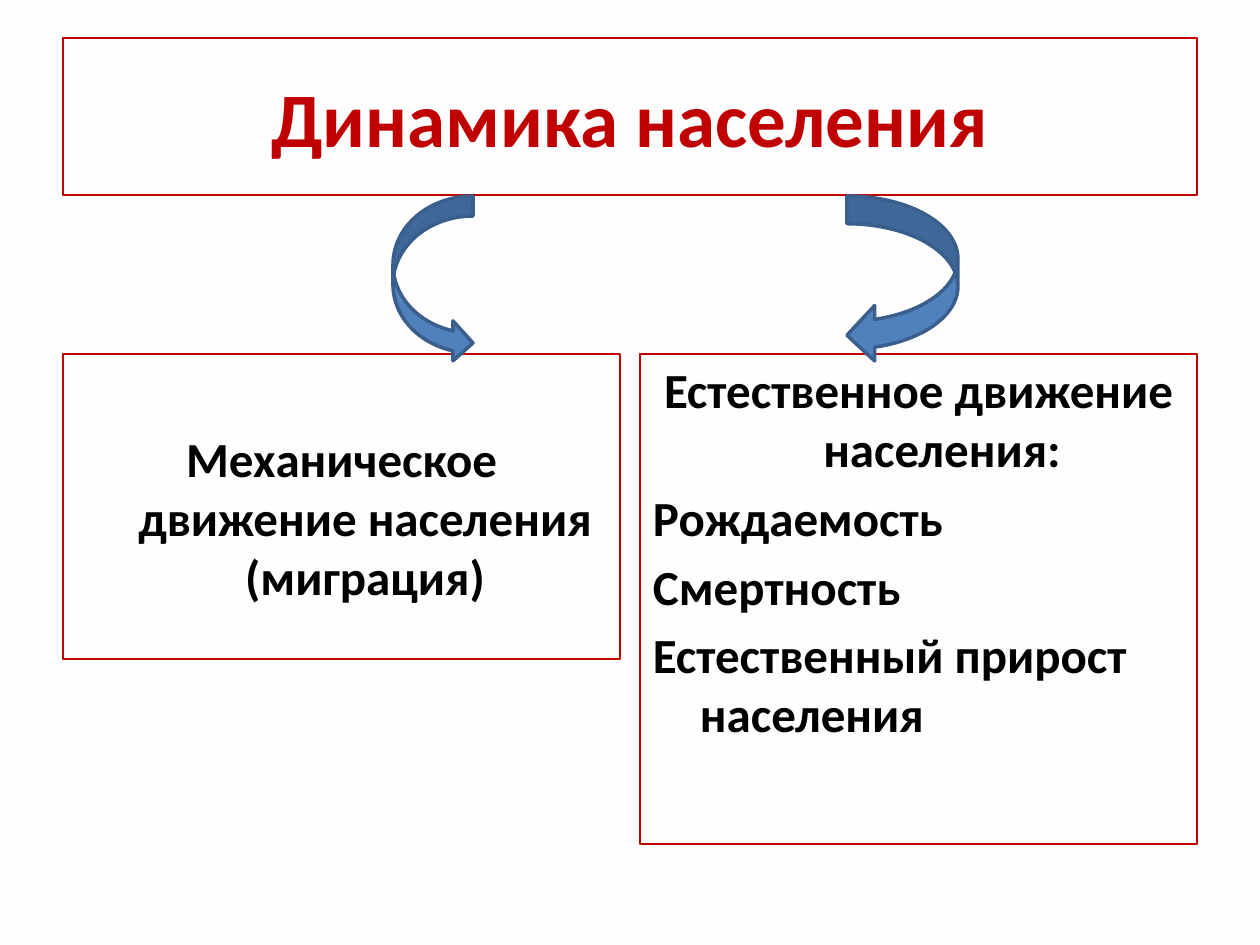
import pptx
import pptx.util
import pptx.dml.color
import pptx.enum.shapes
import pptx.enum.text

SCALE = 914400 / 126
COLORS = {
    "background": "FFFEFF",
    "red": "C00000",
    "black": "000000",
    "arrow": "4F81BD",
    "arrow_edge": "3A5F8C",
}
SHAPES = pptx.enum.shapes.MSO_SHAPE
ALIGN = pptx.enum.text.PP_ALIGN
ANCHOR = pptx.enum.text.MSO_ANCHOR


def emu(px):
    return pptx.util.Emu(round(px * SCALE))


def color(name):
    return pptx.dml.color.RGBColor.from_string(COLORS[name])


def add_shape(page, kind, box, fill, line, weight):
    shape = page.shapes.add_shape(kind, *map(emu, box))
    shape.shadow.inherit = False
    if fill:
        shape.fill.solid()
        shape.fill.fore_color.rgb = color(fill)
    else:
        shape.fill.background()
    shape.line.color.rgb = color(line)
    shape.line.width = pptx.util.Pt(weight)
    return shape


def add_frame(page, box, anchor=ANCHOR.TOP, top=6):
    """Add a red-edged box and return its text frame."""
    frame = add_shape(page, SHAPES.RECTANGLE, box, None, "red", 0.75).text_frame
    frame.word_wrap = True
    frame.vertical_anchor = anchor
    frame.margin_left = frame.margin_right = emu(13)
    frame.margin_top, frame.margin_bottom = emu(top), emu(6)
    return frame


def write(para, text, size=28, ink="black", align=ALIGN.LEFT, hanging=0, before=0):
    para.alignment = align
    para.space_before = pptx.util.Pt(before)
    properties = para._p.get_or_add_pPr()
    properties.set("marL", str(emu(hanging)))
    properties.set("indent", str(-emu(hanging)))
    span = para.add_run()
    span.text = text
    span.font.name = "Calibri"
    span.font.size = pptx.util.Pt(size)
    span.font.bold = True
    span.font.color.rgb = color(ink)


def add_title(page, box, text):
    frame = add_frame(page, box, anchor=ANCHOR.MIDDLE)
    write(frame.paragraphs[0], text, size=44, ink="red", align=ALIGN.CENTER)


def add_branch(page, box, heading, items=(), top=6):
    """Add a box with a centred heading and hanging items below it."""
    frame = add_frame(page, box, top=top)
    write(frame.paragraphs[0], heading, align=ALIGN.CENTER, hanging=47, before=5.6)
    for item in items:
        write(frame.add_paragraph(), item, hanging=47, before=5.6)


def add_arrow(page, box, kind):
    add_shape(page, kind, box, "arrow", "arrow_edge", 2)


def main():
    deck = pptx.Presentation()
    deck.slide_width, deck.slide_height = emu(1260), emu(945)
    page = deck.slides.add_slide(deck.slide_layouts[6])
    page.background.fill.solid()
    page.background.fill.fore_color.rgb = color("background")

    # Title
    add_title(page, (63, 38, 1134, 157), "Динамика населения")

    # Two kinds of population movement
    add_branch(page, (63, 354, 557, 305),
               "Механическое движение населения (миграция)", top=75)
    add_branch(page, (640, 354, 557, 490), "Естественное движение населения:",
               ("Рождаемость", "Смертность", "Естественный прирост населения"))

    # Arrows from the title to the branches
    add_arrow(page, (393, 196, 80, 167), SHAPES.CURVED_RIGHT_ARROW)
    add_arrow(page, (847, 196, 111, 167), SHAPES.CURVED_LEFT_ARROW)

    deck.save("out.pptx")


if __name__ == "__main__":
    main()
